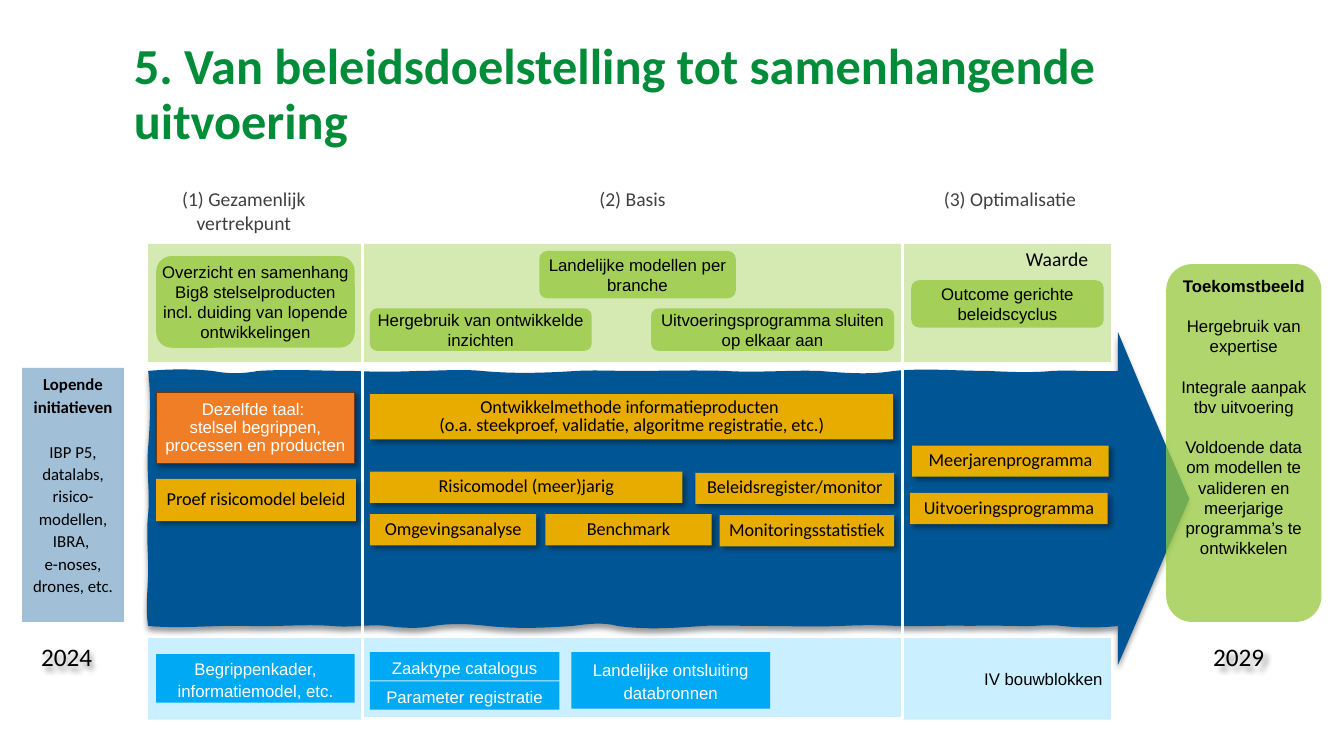
from dataclasses import dataclass, field
from typing import NamedTuple

from lxml.etree import SubElement
from pptx import Presentation
from pptx.dml.color import RGBColor
from pptx.enum.shapes import MSO_SHAPE
from pptx.enum.text import MSO_ANCHOR, PP_ALIGN
from pptx.oxml.ns import qn
from pptx.util import Emu, Inches, Pt

WIDTH, HEIGHT = Emu(Inches(40) // 3), Inches(7.5)
COLUMN, ROW = WIDTH / 40, HEIGHT / 30

COLORS = {
    "black": "000000", "white": "FFFFFF", "heading": "404040", "title": "008C38",
    "value band": "D5E9B3", "value": "96C83F", "blue": "005694", "block band": "CAEFFF",
    "block": "00A9F3", "product": "E8AC00", "language": "F07E26", "brown": "693711",
}
MIDDLE = {"vertical_anchor": MSO_ANCHOR.MIDDLE}
SNUG = {"margin_left": 0, "margin_right": 0, "margin_top": Inches(0.04), "margin_bottom": Inches(0.04)}
NARROW = SNUG | {"margin_left": Inches(0.04), "margin_right": Inches(0.04)}
CENTER = {"alignment": PP_ALIGN.CENTER}
ARIAL = {"name": "Arial", "size": Pt(12), "bold": False}
CALIBRI = {"name": "Calibri", "size": Pt(14), "bold": False}


@dataclass(frozen=True)
class Style:
    preset: MSO_SHAPE | None = MSO_SHAPE.RECTANGLE
    fill: str = ""
    opacity: int = 100
    line: tuple[str, float] | None = None
    shadow_angle: int | None = None
    frame: dict = field(default_factory=dict)
    paragraph: dict = field(default_factory=lambda: CENTER)
    font: dict = field(default_factory=lambda: ARIAL)
    ink: str = "black"
    gap: float = 0
    bold_lead: bool = False


class Box(NamedTuple):
    style: Style
    col: float
    row: float
    cols: float
    rows: float
    lines: tuple[str, ...] = ()


class Bend(NamedTuple):
    """A wavy stretch up to a point, with the shift of its two control points."""
    col: float
    row: float
    first: float = 0
    second: float = 0


TITLE = Style(None, frame=MIDDLE, paragraph={"line_spacing": 0.9},
              font={"name": "Calibri", "size": Pt(36), "bold": True}, ink="title")
HEADING = Style(None, font=CALIBRI, ink="heading")
PHASE_FRAME = Style(line=("white", 2.25), font=CALIBRI, ink="heading")
BAND_LABEL = Style(None, paragraph={}, font=CALIBRI)
VALUE_BAND = Style(fill="value band")
BLOCK_BAND = Style(fill="block band", frame=MIDDLE | {"margin_right": Inches(0.08)},
                   paragraph={"alignment": PP_ALIGN.RIGHT})
VALUE = Style(MSO_SHAPE.ROUNDED_RECTANGLE, "value", 77, frame=SNUG | MIDDLE)
FUTURE = Style(MSO_SHAPE.ROUNDED_RECTANGLE, "value", 76, frame=SNUG, gap=14.4, bold_lead=True)
RUNNING = Style(fill="blue", opacity=37, frame=NARROW, paragraph=CENTER | {"line_spacing": Pt(16)},
                font=CALIBRI | {"size": Pt(12)}, gap=16, bold_lead=True)
BLOCK = Style(fill="block", frame=NARROW | MIDDLE, paragraph=CENTER | {"line_spacing": Pt(16)},
              ink="white")
PRODUCT = Style(fill="product", shadow_angle=45, frame=SNUG | MIDDLE,
                paragraph=CENTER | {"line_spacing": Pt(13)}, font=CALIBRI | {"size": Pt(13)})
LANGUAGE = Style(fill="language", line=("brown", 1), shadow_angle=45, frame=NARROW | MIDDLE,
                 paragraph=CENTER | {"line_spacing": Pt(13)}, ink="white")
YEARS = Style(shadow_angle=45, frame={"vertical_anchor": MSO_ANCHOR.BOTTOM, "margin_right": 0},
              paragraph={"alignment": PP_ALIGN.LEFT}, font=CALIBRI | {"size": Pt(18)})

BEHIND_ARROW = [
    Box(VALUE_BAND, 4.41, 9.68, 28.65, 4.68),
    Box(BAND_LABEL, 30.24, 9.6, 3.57, 1.12, ("Waarde",)),
    Box(HEADING, 26.91, 7.24, 6.3, 19.52, ("(3) Optimalisatie",)),
    Box(HEADING, 4.11, 7.24, 6.3, 19.52, ("(1) Gezamenlijk vertrekpunt",)),
    Box(BLOCK_BAND, 4.41, 25.32, 28.65, 3.24, ("IV bouwblokken",)),
]
BEFORE_ARROW = [
    Box(RUNNING, 0.66, 14.6, 3.03, 10.08,
        ("Lopende initiatieven", "IBP P5, datalabs, risico-modellen, IBRA, \ne-noses, drones, etc.")),
    Box(VALUE, 4.65, 10.16, 5.91, 3.64,
        ("Overzicht en samenhang Big8 stelselproducten incl. duiding van lopende ontwikkelingen",)),
    Box(TITLE, 3.69, 1.56, 29.97, 4.48, ("5. Van beleidsdoelstelling tot samenhangende uitvoering",)),
    Box(YEARS, 0.93, 25.36, 38.19, 1.48, ("2024\t2029",)),
    Box(PHASE_FRAME, 10.8, 7.24, 16.05, 21.28, ("(2) Basis",)),
    Box(FUTURE, 34.71, 10.48, 4.62, 14.2,
        ("Toekomstbeeld", "Hergebruik van expertise", "Integrale aanpak tbv uitvoering",
         "Voldoende data om modellen te valideren en meerjarige programma’s te ontwikkelen")),
    Box(BLOCK, 4.65, 25.96, 5.91, 1.92, ("Begrippenkader, informatiemodel, etc.",)),
    Box(BLOCK, 11.01, 25.88, 5.64, 1.12, ("Zaaktype catalogus",)),
    Box(BLOCK, 17.01, 25.88, 5.91, 2.24, ("Landelijke ontsluiting databronnen",)),
    Box(VALUE, 19.38, 12.24, 7.23, 1.68, ("Uitvoeringsprogramma sluiten op elkaar aan",)),
    Box(VALUE, 11.01, 12.24, 6.6, 1.68, ("Hergebruik van ontwikkelde inzichten",)),
    Box(LANGUAGE, 4.65, 15.56, 5.91, 2.84,
        ("Dezelfde taal: \nstelsel begrippen, processen en producten",)),
    Box(PRODUCT, 16.23, 20.4, 4.95, 1.24, ("Benchmark",)),
    Box(PRODUCT, 21.42, 20.44, 5.19, 1.24, ("Monitoringsstatistiek",)),
    Box(PRODUCT, 11.01, 15.64, 15.57, 1.8,
        ("Ontwikkelmethode informatieproducten ",
         "(o.a. steekproef, validatie, algoritme registratie, etc.)")),
    Box(PRODUCT, 27.09, 19.56, 5.88, 1.24, ("Uitvoeringsprogramma",)),
    Box(PRODUCT, 11.01, 18.72, 9.3, 1.24, ("Risicomodel (meer)jarig",)),
    Box(PRODUCT, 11.01, 20.4, 4.95, 1.24, ("Omgevingsanalyse",)),
    Box(PRODUCT, 20.7, 18.76, 5.91, 1.24, ("Beleidsregister/monitor",)),
    Box(PRODUCT, 27.15, 17.68, 5.85, 1.24, ("Meerjarenprogramma",)),
    Box(VALUE, 16.05, 9.96, 5.85, 1.88, ("Landelijke modellen per branche",)),
    Box(VALUE, 27.12, 11.12, 5.73, 1.88, ("Outcome gerichte beleidscyclus",)),
    Box(PRODUCT, 4.65, 19, 5.94, 1.68, ("Proef risicomodel beleid",)),
    Box(BLOCK, 11.01, 27.04, 5.64, 1.12, ("Parameter registratie",)),
]

TAIL, NECK, TOP, BOTTOM = 4.41, 33.27, 14.72, 24.84
TOP_WAVES = [
    (6.33, -.08, -.08), (7.68, .12, .12), (10.5, -.08, 0), (12.42, .04, .04), (14.34, 0, -.08),
    (17.16, .12, .08), (18.78, -.04, 0), (21.6, 0, -.04), (24.39, .08, -.04), (26.61, .08, .16),
    (29.4, -.12, 0), (31.32, .04, .08), (NECK, -.04, .04)]
HEAD = [(NECK, 13.16), (33.96, 15.36), (34.68, 17.6), (35.4, 19.8), (34.68, 22), (34.02, 24.08),
        (NECK, 26.4), (NECK, BOTTOM)]
BOTTOM_WAVES = [
    (31.62, .08, .08), (30.27, -.08, .04), (28.92, 0, -.04), (26.7, -.04, .04), (25.05, -.04, -.04),
    (22.53, .04, 0), (20.91, 0, -.04), (18.39, .08, .16), (17.04, -.16, -.08), (14.52, .08, .12),
    (12.9, -.08, -.12), (11.52, .12, .08), (9.9, -.08, .08), (7.38, -.08, .04), (TAIL, -.04, .12)]
TAIL_WAVES = [(22.6, -.09, 0), (20.4, 0, -.06), (17.76, .06, -.06), (TOP, .06, .09)]
ARROW = (
    [Bend(col, TOP, *shift) for col, *shift in TOP_WAVES]
    + [Bend(*corner) for corner in HEAD]
    + [Bend(col, BOTTOM, *shift) for col, *shift in BOTTOM_WAVES]
    + [Bend(TAIL, row, *shift) for row, *shift in TAIL_WAVES])


def apply(target, formats: dict) -> None:
    for name, value in formats.items():
        setattr(target, name, value)


def rgb(color: str) -> RGBColor:
    return RGBColor.from_string(COLORS[color])


def paint(shape, style: Style) -> None:
    shape.shadow.inherit = False
    properties = shape.element.spPr
    if style.fill:
        shape.fill.solid()
        shape.fill.fore_color.rgb = rgb(style.fill)
        if style.opacity < 100:
            tint = properties.find(".//" + qn("a:srgbClr"))
            SubElement(tint, qn("a:alpha"), val=str(style.opacity * 1000))
    else:
        shape.fill.background()
    if style.line:
        color, points = style.line
        shape.line.color.rgb = rgb(color)
        shape.line.width = Pt(points)
    else:
        shape.line.fill.background()
    if style.shadow_angle is not None:
        shadow = SubElement(properties.find(qn("a:effectLst")), qn("a:outerShdw"),
                            blurRad=str(Pt(4)), dist=str(Pt(3)),
                            dir=str(style.shadow_angle * 60000), algn="tl", rotWithShape="0")
        shade = SubElement(shadow, qn("a:srgbClr"), val=COLORS["black"])
        SubElement(shade, qn("a:alpha"), val="40000")


def write(shape, style: Style, lines: tuple[str, ...]) -> None:
    frame = shape.text_frame
    apply(frame, {"word_wrap": True, "vertical_anchor": MSO_ANCHOR.TOP} | style.frame)
    for index, line in enumerate(lines):
        paragraph = frame.paragraphs[0] if index == 0 else frame.add_paragraph()
        paragraph.text = line
        apply(paragraph, style.paragraph)
        if index and style.gap:
            paragraph.space_before = Pt(style.gap)
        if "\t" in line:
            tabs = SubElement(paragraph._p.get_or_add_pPr(), qn("a:tabLst"))
            SubElement(tabs, qn("a:tab"), pos=str(round(36.4 * COLUMN)), algn="r")
        for run in paragraph.runs:
            apply(run.font, style.font)
            run.font.color.rgb = rgb(style.ink)
            if style.bold_lead and index == 0:
                run.font.bold = True


def draw_box(slide, box: Box) -> None:
    place = [Emu(round(length * unit)) for length, unit in zip(box[1:5], (COLUMN, ROW) * 2)]
    if box.style.preset is None:
        shape = slide.shapes.add_textbox(*place)
    else:
        shape = slide.shapes.add_shape(box.style.preset, *place)
    paint(shape, box.style)
    if box.lines:
        write(shape, box.style, box.lines)


def curve(arrow) -> None:
    """Turn the wavy stretches of the outline from straight lines into curves."""
    col, row = TAIL, TOP
    for bend, segment in zip(ARROW, list(arrow.element.iter(qn("a:lnTo")))):
        if bend.first or bend.second:
            level = bend.row == row
            wave = segment.makeelement(qn("a:cubicBezTo"))
            for share, shift in ((1 / 3, bend.first), (2 / 3, bend.second)):
                x = col + share * (bend.col - col) + (0 if level else shift)
                y = row + share * (bend.row - row) + (shift if level else 0)
                SubElement(wave, qn("a:pt"), x=str(round(x * COLUMN - arrow.left)),
                           y=str(round(y * ROW - arrow.top)))
            wave.append(segment[0])
            segment.getparent().replace(segment, wave)
        col, row = bend.col, bend.row


def draw_arrow(slide) -> None:
    outline = slide.shapes.build_freeform(round(TAIL * COLUMN), round(TOP * ROW))
    outline.add_line_segments([(round(b.col * COLUMN), round(b.row * ROW)) for b in ARROW])
    arrow = outline.convert_to_shape()
    curve(arrow)
    paint(arrow, Style(fill="blue", shadow_angle=90))


def main() -> None:
    deck = Presentation()
    deck.slide_width, deck.slide_height = WIDTH, HEIGHT
    slide = deck.slides.add_slide(deck.slide_layouts[6])
    for box in BEHIND_ARROW:
        draw_box(slide, box)
    draw_arrow(slide)
    for box in BEFORE_ARROW:
        draw_box(slide, box)
    deck.save("out.pptx")


if __name__ == "__main__":
    main()
